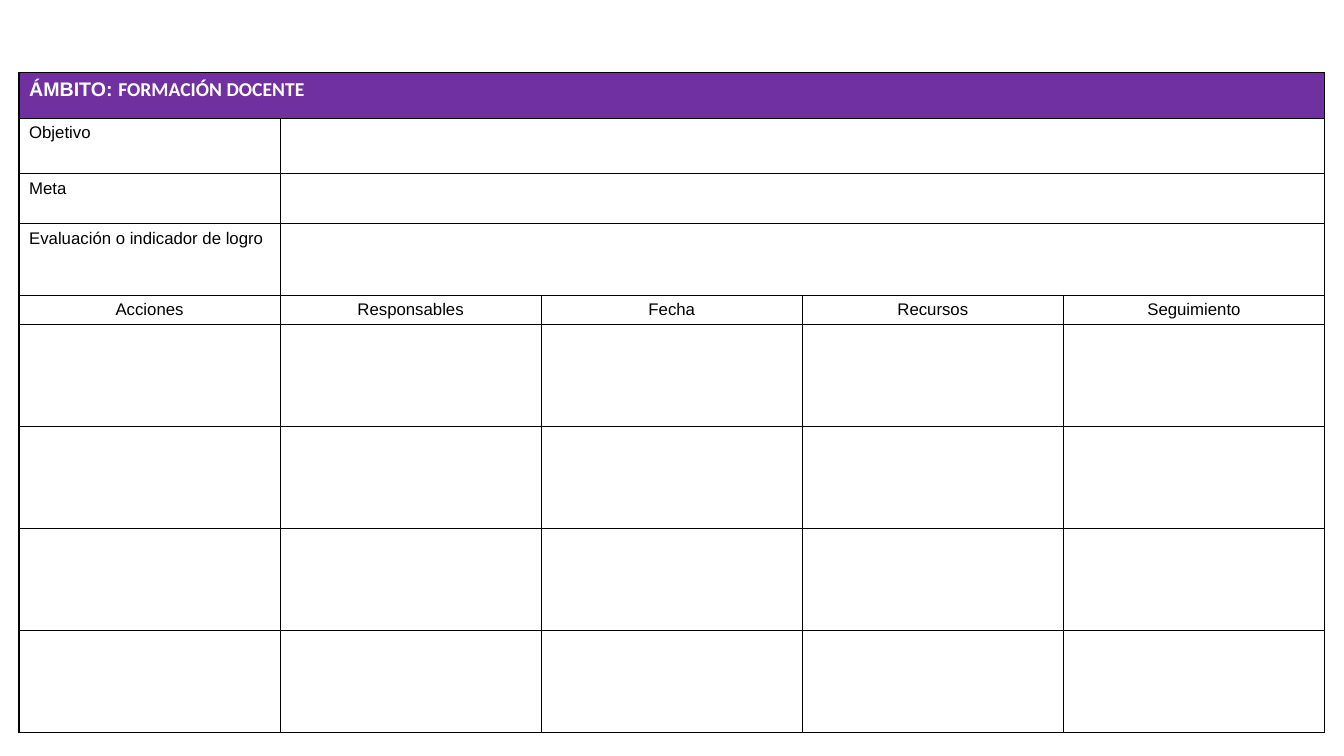
from dataclasses import dataclass

from lxml import etree
from pptx import Presentation
from pptx.dml.color import RGBColor
from pptx.enum.text import PP_ALIGN
from pptx.oxml.ns import qn
from pptx.util import Cm, Pt

LEFT, CENTER = PP_ALIGN.LEFT, PP_ALIGN.CENTER


@dataclass(frozen=True)
class Theme:
    purple: str = "7030A0"
    white: str = "FFFFFF"
    black: str = "000000"
    font: str = "Arial"
    accent: str = "Calibri"
    head: int = 14
    body: int = 12
    line: int = 1


THEME = Theme()
COL_WIDTH = 6.58
ROW_HEIGHTS = [1.16, 1.39, 1.26, 1.8, 0.73] + [2.57] * 4
LABELS = ["Objetivo", "Meta", "Evaluación o indicador de logro"]
HEADS = ["Acciones", "Responsables", "Fecha", "Recursos", "Seguimiento"]


def add_borders(cell):
    props = cell._tc.get_or_add_tcPr()
    for place, side in enumerate(("lnL", "lnR", "lnT", "lnB")):
        line = etree.Element(qn(f"a:{side}"), w=str(Pt(THEME.line)))
        fill = etree.SubElement(line, qn("a:solidFill"))
        etree.SubElement(fill, qn("a:srgbClr"), val=THEME.black)
        props.insert(place, line)


def style_cell(cell, fill):
    cell.fill.solid()
    cell.fill.fore_color.rgb = RGBColor.from_string(fill)
    add_borders(cell)


def add_grid(slide):
    """Add the table with its sizes, white cells and black borders."""
    rows, cols = len(ROW_HEIGHTS), len(HEADS)
    frame = slide.shapes.add_table(
        rows, cols, Cm(0.48), Cm(1.83),
        Cm(COL_WIDTH * cols), Cm(sum(ROW_HEIGHTS)))
    table = frame.table
    table.first_row = table.horz_banding = False
    for col in table.columns:
        col.width = Cm(COL_WIDTH)
    for row, height in zip(table.rows, ROW_HEIGHTS):
        row.height = Cm(height)
    for cell in table.iter_cells():
        style_cell(cell, THEME.white)
    return table


def write_text(cell, text, align=LEFT):
    para = cell.text_frame.paragraphs[0]
    para.text = text
    para.alignment = align
    para.font.name = THEME.font
    para.font.size = Pt(THEME.body)
    para.font.bold = False
    para.font.color.rgb = RGBColor.from_string(THEME.black)


def write_title(cell):
    para = cell.text_frame.paragraphs[0]
    for text, face in (("ÁMBITO: ", THEME.font),
                       ("FORMACIÓN DOCENTE", THEME.accent)):
        run = para.add_run()
        run.text = text
        run.font.name = face
        run.font.size = Pt(THEME.head)
        run.font.bold = True
        run.font.color.rgb = RGBColor.from_string(THEME.white)


def fill_grid(table):
    last = len(HEADS) - 1
    for cell in table.rows[0].cells:
        cell.fill.fore_color.rgb = RGBColor.from_string(THEME.purple)
    table.cell(0, 0).merge(table.cell(0, last))
    write_title(table.cell(0, 0))
    for row, label in enumerate(LABELS, start=1):
        table.cell(row, 1).merge(table.cell(row, last))
        write_text(table.cell(row, 0), label)
    for col, head in enumerate(HEADS):
        write_text(table.cell(len(LABELS) + 1, col), head, CENTER)


def main():
    deck = Presentation()
    deck.slide_width, deck.slide_height = Cm(33.87), Cm(19.05)
    slide = deck.slides.add_slide(deck.slide_layouts[6])
    fill_grid(add_grid(slide))
    deck.save("out.pptx")


if __name__ == "__main__":
    main()
